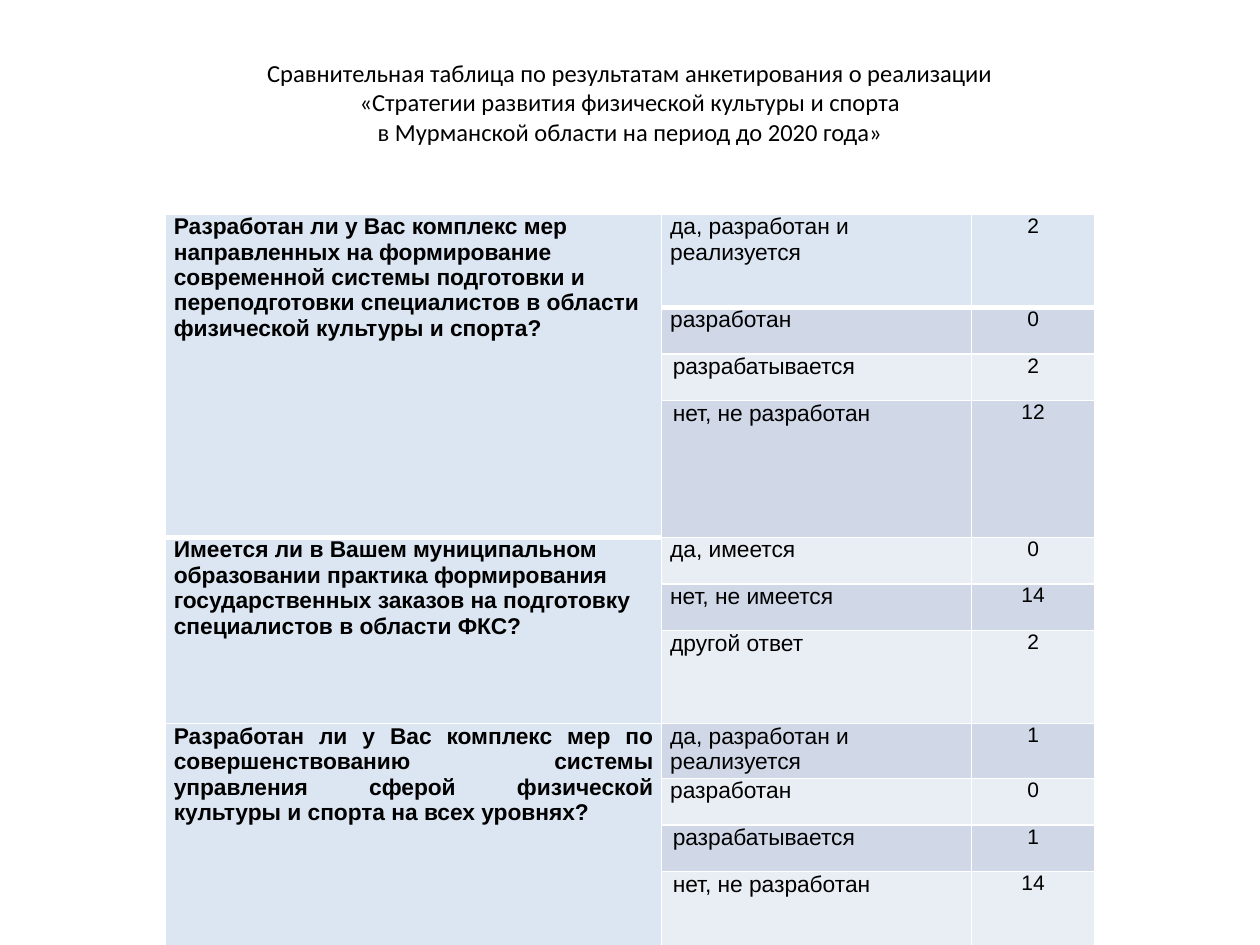
from lxml.etree import SubElement
from pptx import Presentation
from pptx.dml.color import RGBColor
from pptx.enum.text import MSO_ANCHOR, PP_ALIGN
from pptx.oxml.ns import qn
from pptx.util import Inches, Pt

TITLE = (
    "Сравнительная таблица по результатам анкетирования о реализации",
    "«Стратегии развития физической культуры и спорта",
    "в Мурманской области на период до 2020 года»",
)
# Each question: text, alignment, then (answer, count, row height)
QUESTIONS = [
    ("Разработан ли у Вас комплекс мер направленных на формирование современной "
     "системы подготовки и переподготовки специалистов в области физической "
     "культуры и спорта?", PP_ALIGN.LEFT,
     [("да, разработан и реализуется", 2, 0.74), ("разработан", 0, 0.37),
      ("разрабатывается", 2, 0.37), ("нет, не разработан", 12, 0.37)]),
    ("Имеется ли в Вашем муниципальном образовании практика формирования "
     "государственных заказов на подготовку специалистов в области ФКС?",
     PP_ALIGN.LEFT,
     [("да, имеется", 0, 0.37), ("нет, не имеется", 14, 0.37),
      ("другой ответ", 2, 0.74)]),
    ("Разработан ли у Вас комплекс мер по совершенствованию системы управления "
     "сферой физической культуры и спорта на всех уровнях?", PP_ALIGN.JUSTIFY,
     [("да, разработан и реализуется", 1, 0.4), ("разработан", 0, 0.37),
      ("разрабатывается", 1, 0.37), ("нет, не разработан", 14, 0.71)]),
]
INDENTED = {"разрабатывается", "нет, не разработан"}
COLUMN_WIDTHS = (3.94, 2.46, 0.98)
COLORS = {"text": "000000", "border": "FFFFFF", "head": "DCE6F2",
          "odd": "D0D8E8", "even": "E9EDF4"}
CELL_FORMAT = {"margin_left": Inches(0.07), "margin_right": Inches(0.07),
               "margin_top": 0, "margin_bottom": 0}
TITLE_FORMAT = {"word_wrap": True, "vertical_anchor": MSO_ANCHOR.MIDDLE,
                "margin_bottom": Inches(0.28)}
QUESTION_FONT = {"name": "Arial", "size": Pt(13), "bold": True}
ANSWER_FONT = {"name": "Arial", "size": Pt(13), "bold": False}
COUNT_FONT = {"name": "Arial", "size": Pt(12), "bold": False}
TITLE_FONT = {"name": "Calibri", "size": Pt(14)}


def apply(target, values):
    for name, value in values.items():
        setattr(target, name, value)


def write(paragraph, text, font, align):
    paragraph.text = text
    paragraph.alignment = align
    for span in paragraph.runs:
        apply(span.font, font)
        span.font.color.rgb = RGBColor.from_string(COLORS["text"])


def add_borders(cell, bottom):
    properties = cell._tc.get_or_add_tcPr()
    for side, width in (("L", 1), ("R", 1), ("T", 1), ("B", bottom)):
        line = SubElement(properties, qn(f"a:ln{side}"), w=str(Pt(width)))
        fill = SubElement(line, qn("a:solidFill"))
        SubElement(fill, qn("a:srgbClr"), val=COLORS["border"])


def fill_cell(cell, text, font, align, color):
    apply(cell, CELL_FORMAT)
    cell.fill.solid()
    cell.fill.fore_color.rgb = RGBColor.from_string(COLORS[color])
    paragraph = cell.text_frame.paragraphs[0]
    write(paragraph, text, font, align)
    return paragraph


deck = Presentation()
deck.slide_width, deck.slide_height = Inches(10), Inches(7.5)
page = deck.slides.add_slide(deck.slide_layouts[6])

# Title
box = page.shapes.add_textbox(Inches(0.5), Inches(0.3), Inches(9), Inches(1.25))
apply(box.text_frame, TITLE_FORMAT)
write(box.text_frame.paragraphs[0], "\v".join(TITLE), TITLE_FONT, PP_ALIGN.CENTER)

# Table grid
heights = [height for _, _, answers in QUESTIONS for _, _, height in answers]
table = page.shapes.add_table(
    len(heights), len(COLUMN_WIDTHS), Inches(1.31), Inches(1.7),
    Inches(sum(COLUMN_WIDTHS)), Inches(sum(heights))).table
for column, width in zip(table.columns, COLUMN_WIDTHS):
    column.width = Inches(width)
for index, height in enumerate(heights):
    table.rows[index].height = Inches(height)
    for column in range(len(COLUMN_WIDTHS)):
        add_borders(table.cell(index, column), 3 if index == 0 else 1)

# Questions span their answers; answer rows alternate in colour
row = 0
for question, align, answers in QUESTIONS:
    lead = table.cell(row, 0)
    lead.merge(table.cell(row + len(answers) - 1, 0))
    fill_cell(lead, question, QUESTION_FONT, align, "head")
    for answer, count, _ in answers:
        color = "head" if row == 0 else "odd" if row % 2 else "even"
        indented = answer in INDENTED
        paragraph = fill_cell(table.cell(row, 1), answer, ANSWER_FONT,
                              PP_ALIGN.JUSTIFY if indented else PP_ALIGN.LEFT, color)
        if indented:
            paragraph._p.get_or_add_pPr().set("indent", str(Inches(0.02)))
        fill_cell(table.cell(row, 2), str(count), COUNT_FONT, PP_ALIGN.CENTER, color)
        row += 1

deck.save("out.pptx")
